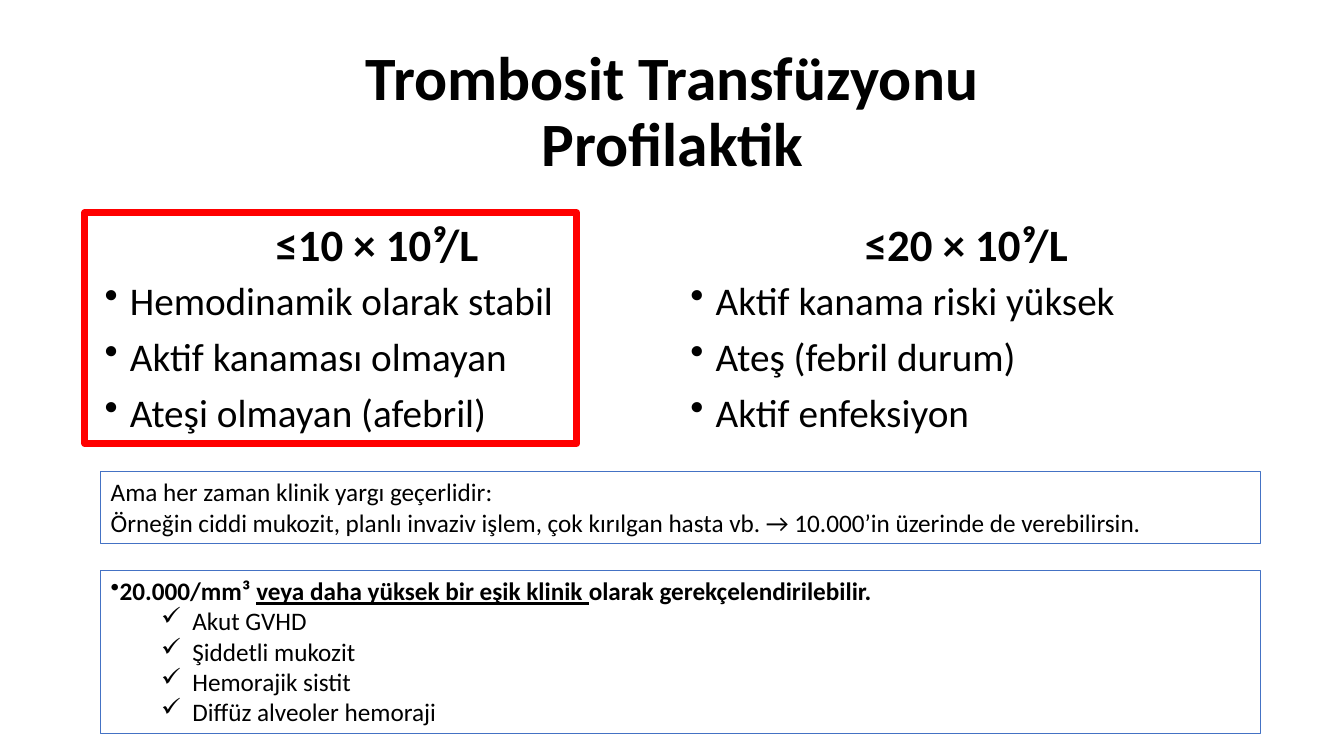
import lxml.etree
import pptx
import pptx.dml.color
import pptx.enum.shapes
import pptx.enum.text
import pptx.oxml.ns
import pptx.util

COLORS = {"text": "000000", "note": "4472C4", "highlight": "FF0000"}
FONT = "Calibri"
CENTER = pptx.enum.text.PP_ALIGN.CENTER
LEFT = pptx.enum.text.PP_ALIGN.LEFT
ANCHOR = pptx.enum.text.MSO_ANCHOR

# Column layout in inches
COLUMN_TOP, HEADING_HEIGHT, LIST_HEIGHT = 1.84, 0.9, 4.03
NOTE_LEFT, NOTE_WIDTH = 1, 11.5

THRESHOLDS = [
    # left, width, list offset, heading, criteria
    (0.92, 5.64, 0.02, "≤10 × 10⁹/L",
     ["Hemodinamik olarak stabil", "Aktif kanaması olmayan", "Ateşi olmayan (afebril)"]),
    (6.75, 5.67, 0, "≤20 × 10⁹/L",
     ["Aktif kanama riski yüksek", "Ateş (febril durum)", "Aktif enfeksiyon"]),
]
JUDGEMENT = [
    "Ama her zaman klinik yargı geçerlidir:",
    "Örneğin ciddi mukozit, planlı invaziv işlem, çok kırılgan hasta vb. "
    "→ 10.000’in üzerinde de verebilirsin.",
]
HIGHER_THRESHOLD = [
    ("20.000/mm³ ", False),
    ("veya daha yüksek bir eşik klinik ", True),
    ("olarak gerekçelendirilebilir.", False),
]
CONDITIONS = ["Akut GVHD", "Şiddetli mukozit", "Hemorajik sistit", "Diffüz alveoler hemoraji"]


def color(name):
    return pptx.dml.color.RGBColor.from_string(COLORS[name])


def add_text_box(slide, box, anchor=ANCHOR.TOP):
    frame = slide.shapes.add_textbox(*map(pptx.util.Inches, box)).text_frame
    frame.word_wrap = True
    frame.vertical_anchor = anchor
    return frame


def add_outline(slide, box, line_color, line_width):
    shape = slide.shapes.add_shape(
        pptx.enum.shapes.MSO_SHAPE.RECTANGLE, *map(pptx.util.Inches, box))
    shape.shadow.inherit = False
    shape.fill.background()
    shape.line.color.rgb = color(line_color)
    shape.line.width = pptx.util.Pt(line_width)
    frame = shape.text_frame
    frame.word_wrap = True
    frame.vertical_anchor = ANCHOR.TOP
    return frame


def format_para(para, size, bold=False, align=LEFT, line_spacing=None, space_before=None):
    para.alignment = align
    if line_spacing:
        para.line_spacing = line_spacing
    if space_before:
        para.space_before = pptx.util.Pt(space_before)
    for span in para.runs:
        span.font.name = FONT
        span.font.size = pptx.util.Pt(size)
        span.font.bold = bold
        span.font.color.rgb = color("text")


def set_bullet(para, symbol, margin=0, hanging=0):
    properties = para._p.get_or_add_pPr()
    properties.set("marL", str(pptx.util.Inches(margin)))
    properties.set("indent", str(-pptx.util.Inches(hanging)))
    bullet = lxml.etree.SubElement(properties, pptx.oxml.ns.qn("a:buChar"))
    bullet.set("char", symbol)


def add_title(slide, box):
    para = add_text_box(slide, box, ANCHOR.MIDDLE).paragraphs[0]
    para.text = "Trombosit Transfüzyonu\nProfilaktik"
    format_para(para, 44, bold=True, align=CENTER, line_spacing=0.9)


def add_threshold(slide, left, width, list_offset, heading, criteria):
    # Heading sits on the lower edge of its box
    frame = add_text_box(slide, (left, COLUMN_TOP, width, HEADING_HEIGHT), ANCHOR.BOTTOM)
    frame.text = heading
    format_para(frame.paragraphs[0], 32, bold=True, align=CENTER,
                line_spacing=0.9, space_before=10)
    # Bulleted criteria below
    frame = add_text_box(
        slide, (left + list_offset, COLUMN_TOP + HEADING_HEIGHT, width, LIST_HEIGHT))
    frame.text = "\n".join(criteria)
    for para in frame.paragraphs:
        format_para(para, 28, line_spacing=0.9, space_before=10)
        set_bullet(para, "•", 0.25, 0.25)


def add_judgement_note(slide, box):
    frame = add_outline(slide, box, "note", 0.75)
    frame.text = "\n".join(JUDGEMENT)
    for para in frame.paragraphs:
        format_para(para, 18)


def add_conditions_note(slide, box):
    frame = add_outline(slide, box, "note", 0.75)
    # Lead sentence with an underlined part
    lead = frame.paragraphs[0]
    for text, underlined in HIGHER_THRESHOLD:
        span = lead.add_run()
        span.text = text
        span.font.underline = underlined
    format_para(lead, 18, bold=True)
    set_bullet(lead, "•")
    # Checked conditions
    for condition in CONDITIONS:
        para = frame.add_paragraph()
        para.text = condition
        para.level = 1
        format_para(para, 18)
        set_bullet(para, "✓", 0.81, 0.31)


def main():
    deck = pptx.Presentation()
    deck.slide_width = pptx.util.Inches(13.33)
    deck.slide_height = pptx.util.Inches(7.5)
    slide = deck.slides.add_slide(deck.slide_layouts[6])

    add_title(slide, (0.92, 0.4, 11.5, 1.45))
    for threshold in THRESHOLDS:
        add_threshold(slide, *threshold)
    add_judgement_note(slide, (NOTE_LEFT, 4.68, NOTE_WIDTH, 0.71))
    add_conditions_note(slide, (NOTE_LEFT, 5.66, NOTE_WIDTH, 1.62))
    # Frame around the first threshold
    add_outline(slide, (0.84, 2.11, 4.88, 2.29), "highlight", 5)

    deck.save("out.pptx")


if __name__ == "__main__":
    main()
